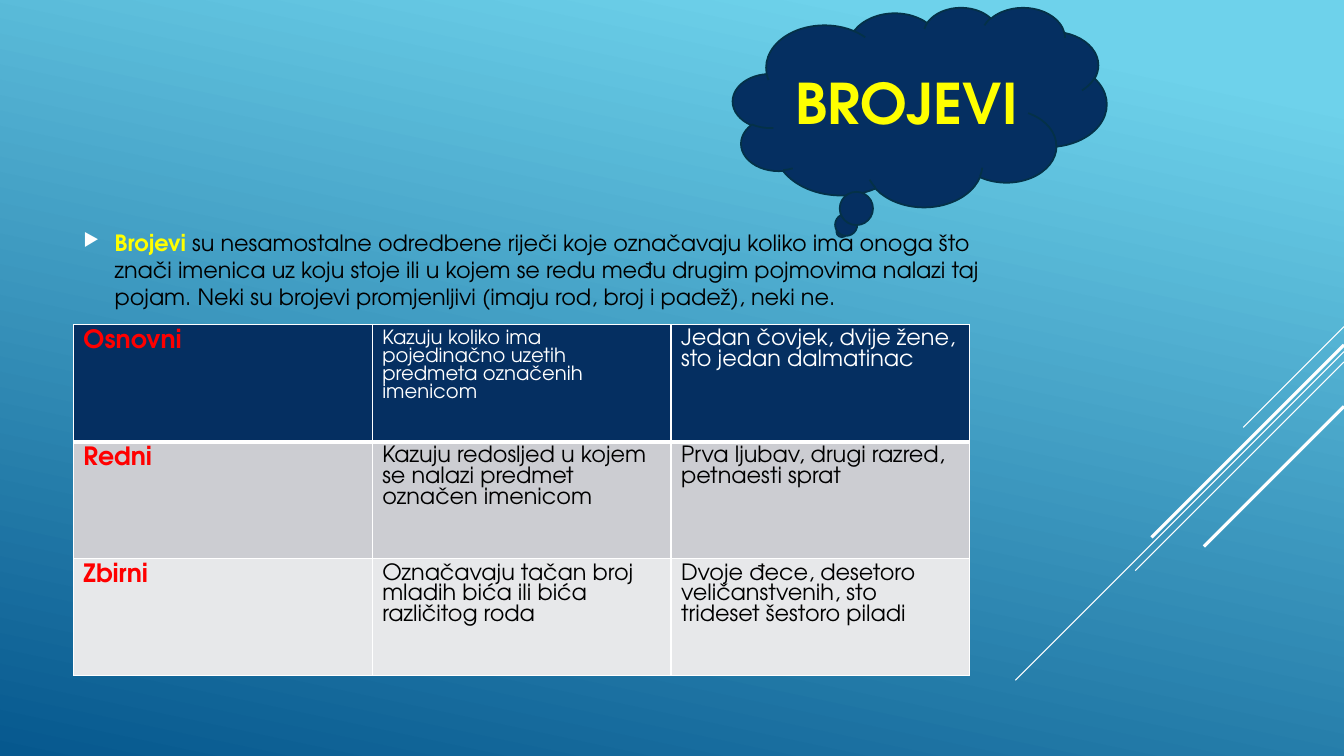
import pptx
import pptx.util
import pptx.dml.color
import pptx.oxml
import pptx.oxml.ns
from pptx.enum.shapes import MSO_CONNECTOR, MSO_SHAPE
from pptx.enum.text import MSO_ANCHOR, PP_ALIGN

Cm, Pt = pptx.util.Cm, pptx.util.Pt

# Content
FONT = "TeX Gyre Adventor"
NAVY, WHITE, BLACK, RED, YELLOW = "052F61", "FFFFFF", "000000", "FF0000", "FFFF00"
TITLE = "BROJEVI"
INTRO = [
    ("Brojevi", YELLOW, True),
    (" su nesamostalne odredbene riječi koje označavaju koliko ima onoga što "
     "znači imenica uz koju stoje ili u kojem se redu među drugim pojmovima "
     "nalazi taj pojam. Neki su brojevi promjenljivi (imaju rod, broj i padež), "
     "neki ne.", BLACK, False),
]
# Row: fill, text colour, bottom border, size of middle cell, cells
ROWS = [
    (NAVY, WHITE, 3, 14, ("Osnovni",
     "Kazuju koliko ima pojedinačno uzetih predmeta označenih imenicom",
     "Jedan čovjek, dvije žene, sto jedan dalmatinac")),
    ("CCCDD2", BLACK, 1, 16, ("Redni",
     "Kazuju redosljed u kojem se nalazi predmet označen imenicom",
     "Prva ljubav, drugi razred, petnaesti sprat")),
    ("E7E8EA", BLACK, 1, 16, ("Zbirni",
     "Označavaju tačan broj mladih bića ili bića različitog roda",
     "Dvoje đece, desetoro veličanstvenih, sto trideset šestoro piladi")),
]
# Diagonals: top at the right edge, run to the left and down, width
RAYS = [(8.23, 2.54, 0.75), (8.86, 8.28, 0.75), (9.12, 5.26, 0.75),
        (8.69, 4.85, 2.25), (10.24, 3.53, 2.25)]
WIDE, HIGH = 33.87, 19.05
COL, ROW = 7.53, 2.95


def tint(code):
    return pptx.dml.color.RGBColor.from_string(code)


def node(text):
    return pptx.oxml.parse_xml(
        text.replace(">", f" {pptx.oxml.ns.nsdecls('a')}>", 1))


def write(para, text, size, code, bold):
    run = para.add_run()
    run.text = text
    font = run.font
    font.name, font.size, font.bold = FONT, Pt(size), bold
    font.color.rgb = tint(code)


def edge(cell, side, width):
    cell._tc.get_or_add_tcPr().append(node(
        f'<a:ln{side} w="{Pt(width)}"><a:solidFill><a:srgbClr val="{WHITE}"/>'
        f'</a:solidFill></a:ln{side}>'))


deck = pptx.Presentation()
deck.slide_width, deck.slide_height = Cm(WIDE), Cm(HIGH)
slide = deck.slides.add_slide(deck.slide_layouts[6])

# Background
back = slide.background.fill
back.gradient()
back.gradient_angle = 258
for stop, (place, code) in zip(back.gradient_stops, [(0.1, "6ED2EB"), (1, "06588E")]):
    stop.position = place
    stop.color.rgb = tint(code)

# Diagonal lines
for top, run, width in RAYS:
    ray = slide.shapes.add_connector(
        MSO_CONNECTOR.STRAIGHT, Cm(WIDE), Cm(top), Cm(WIDE - run), Cm(top + run))
    ray.line.color.rgb = tint(WHITE)
    ray.line.width = Pt(width)
    ray._element.spPr.append(node("<a:effectLst></a:effectLst>"))

# Definition
box = slide.shapes.add_textbox(Cm(1.85), Cm(5.77), Cm(23.7), Cm(2.1)).text_frame
box.word_wrap = True
box.margin_top = box.margin_bottom = 0
para = box.paragraphs[0]
para.line_spacing = Pt(19.3)
props = para._p.get_or_add_pPr()
props.set("marL", str(Cm(0.79)))
props.set("indent", str(-Cm(0.79)))
for mark in (f'<a:buClr><a:srgbClr val="{WHITE}"/></a:buClr>',
             '<a:buSzPct val="80000"></a:buSzPct>',
             '<a:buChar char="▶"></a:buChar>'):
    props.append(node(mark))
for text, code, bold in INTRO:
    write(para, text, 16, code, bold)

# Title cloud
cloud = slide.shapes.add_shape(
    MSO_SHAPE.CLOUD_CALLOUT, Cm(18.47), Cm(0.18), Cm(9.42), Cm(5.03))
cloud.shadow.inherit = False
cloud.fill.solid()
cloud.fill.fore_color.rgb = tint(NAVY)
cloud.line.color.rgb = tint("043148")
cloud.line.width = Pt(1.25)
cloud.text_frame.vertical_anchor = MSO_ANCHOR.MIDDLE
para = cloud.text_frame.paragraphs[0]
para.alignment = PP_ALIGN.CENTER
write(para, TITLE, 40, YELLOW, True)

# Table
table = slide.shapes.add_table(
    3, 3, Cm(1.85), Cm(8.18), Cm(3 * COL), Cm(3 * ROW)).table
for col in table.columns:
    col.width = Cm(COL)
for r, (fill, code, base, size, texts) in enumerate(ROWS):
    table.rows[r].height = Cm(ROW)
    looks = [(18, RED, True), (size, code, False), (16, code, False)]
    for c, (text, look) in enumerate(zip(texts, looks)):
        cell = table.cell(r, c)
        above = ROWS[r - 1][2] if r else 1
        for side, width in zip("LRTB", (1, 1, above, base)):
            edge(cell, side, width)
        cell.fill.solid()
        cell.fill.fore_color.rgb = tint(fill)
        para = cell.text_frame.paragraphs[0]
        para.line_spacing = Pt(round(look[0] * 0.92, 1))
        write(para, text, *look)

deck.save("out.pptx")
